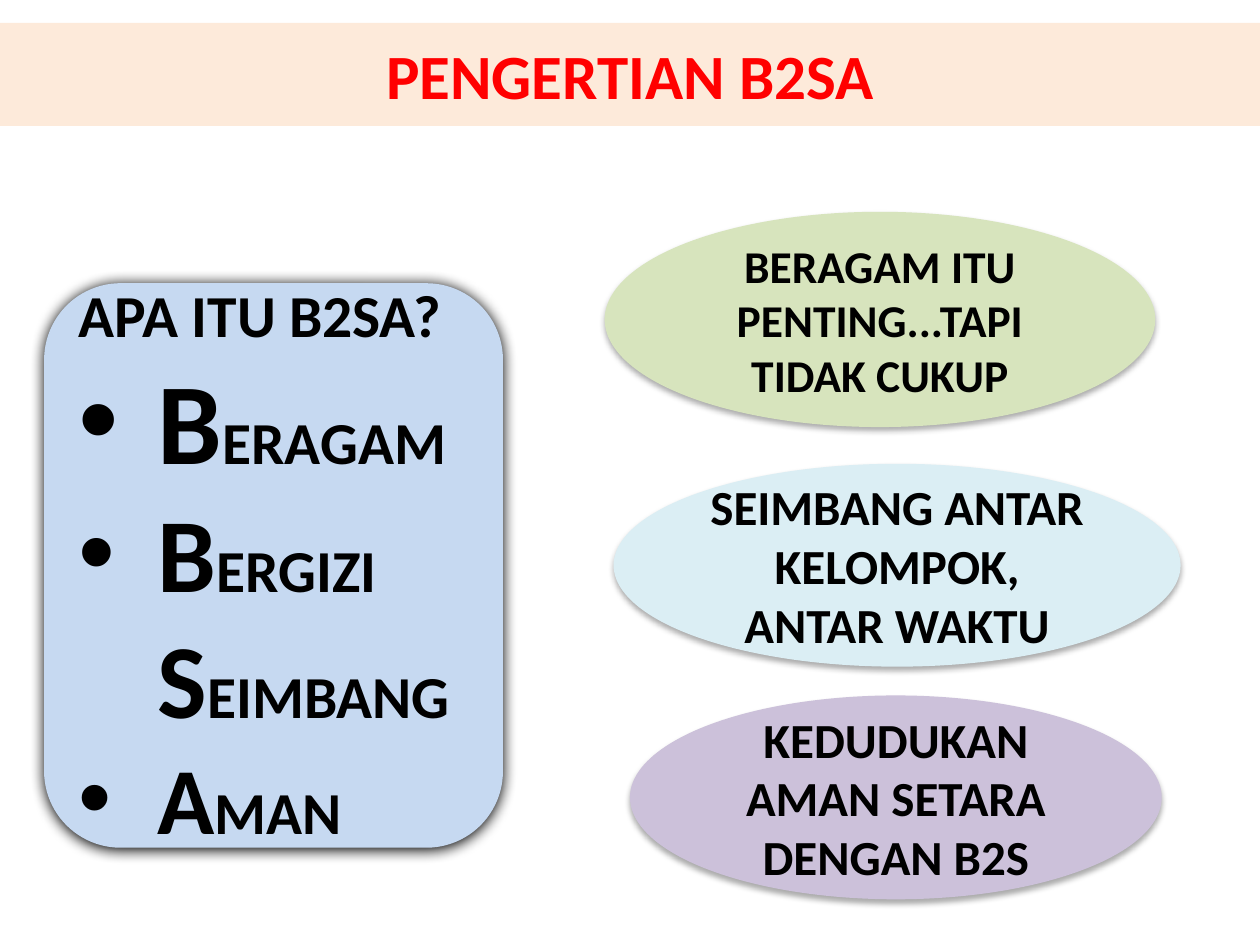
import pptx
import pptx.util
import pptx.dml.color
import pptx.enum.shapes
import pptx.enum.text
import pptx.oxml
import pptx.oxml.ns
import lxml.etree

Cm = pptx.util.Cm
Pt = pptx.util.Pt
RGBColor = pptx.dml.color.RGBColor
SHAPES = pptx.enum.shapes.MSO_SHAPE
ALIGN = pptx.enum.text.PP_ALIGN
qn = pptx.oxml.ns.qn

BLACK = RGBColor(0x00, 0x00, 0x00)
RED = RGBColor(0xFF, 0x00, 0x00)
PEACH = RGBColor(0xFD, 0xEA, 0xDA)
BLUE = RGBColor(0xC6, 0xD9, 0xF1)
GREEN = RGBColor(0xD7, 0xE4, 0xBD)
AQUA = RGBColor(0xDB, 0xEE, 0xF4)
PURPLE = RGBColor(0xCC, 0xC1, 0xDA)

PANEL_SHADOW = {"blur": 8.5, "distance": 1, "opacity": 100}
OVAL_SHADOW = {"blur": 3.5, "distance": 2.2, "opacity": 32}

SMALL_SIZE = 34
# Each paragraph: whether it has a bullet, then its (text, size) runs.
PANEL_PARAGRAPHS = [
    (False, [("APA ITU B2SA?", SMALL_SIZE)]),
    (True, [("B", 66), ("ERAGAM", SMALL_SIZE)]),
    (True, [("B", 60), ("ERGIZI ", SMALL_SIZE), ("S", 60), ("EIMBANG", SMALL_SIZE)]),
    (True, [("A", 54), ("MAN", SMALL_SIZE)]),
]

# Box (left, top, width, height in cm), fill, text, size.
OVALS = [
    ((12.19, 4.27, 11.1, 4.34), GREEN, "BERAGAM ITU PENTING...TAPI TIDAK CUKUP", 26),
    ((12.37, 9.35, 11.43, 4.09), AQUA, "SEIMBANG ANTAR KELOMPOK, ANTAR WAKTU", 28),
    ((12.7, 14.02, 10.72, 4.11), PURPLE, "KEDUDUKAN AMAN SETARA DENGAN B2S", 28),
]


def add_shadow(shape, blur, distance, opacity):
    """Cast a black shadow straight down; lengths in points, opacity in percent."""
    effects = shape._element.spPr.find(qn("a:effectLst"))
    shadow = lxml.etree.SubElement(effects, qn("a:outerShdw"), {
        "blurRad": str(int(Pt(blur))), "dist": str(int(Pt(distance))),
        "dir": "5400000", "rotWithShape": "0"})
    color = lxml.etree.SubElement(shadow, qn("a:srgbClr"), val="000000")
    lxml.etree.SubElement(color, qn("a:alpha"), val=str(opacity * 1000))


def add_bullet(paragraph, indent):
    properties = paragraph._p.get_or_add_pPr()
    properties.set("marL", str(int(indent)))
    properties.set("indent", str(-int(indent)))
    lxml.etree.SubElement(properties, qn("a:buFont"), typeface="Arial")
    lxml.etree.SubElement(properties, qn("a:buChar"), char="•")


def add_filled_shape(slide, kind, box, fill, shadow=None):
    shape = slide.shapes.add_shape(kind, *(Cm(length) for length in box))
    shape.fill.solid()
    shape.fill.fore_color.rgb = fill
    shape.line.fill.background()
    shape.shadow.inherit = False
    if shadow:
        add_shadow(shape, **shadow)
    shape.text_frame.word_wrap = True
    shape.text_frame.vertical_anchor = pptx.enum.text.MSO_ANCHOR.MIDDLE
    return shape


def add_run(paragraph, text, size, color=BLACK):
    run = paragraph.add_run()
    run.text = text
    for name, value in {"name": "Calibri", "size": Pt(size), "bold": True}.items():
        setattr(run.font, name, value)
    run.font.color.rgb = color


def add_label(slide, kind, box, fill, text, size, color=BLACK, shadow=None):
    """Add a filled shape with one centred paragraph."""
    shape = add_filled_shape(slide, kind, box, fill, shadow)
    paragraph = shape.text_frame.paragraphs[0]
    paragraph.alignment = ALIGN.CENTER
    add_run(paragraph, text, size, color)


def add_definition_panel(slide, box):
    shape = add_filled_shape(slide, SHAPES.ROUNDED_RECTANGLE, box, BLUE, PANEL_SHADOW)
    frame = shape.text_frame
    for index, (bulleted, runs) in enumerate(PANEL_PARAGRAPHS):
        paragraph = frame.add_paragraph() if index else frame.paragraphs[0]
        paragraph.alignment = ALIGN.LEFT
        if bulleted:
            add_bullet(paragraph, Cm(1.59))
        for text, size in runs:
            add_run(paragraph, text, size)


def main():
    presentation = pptx.Presentation()
    presentation.slide_width = Cm(25.4)
    presentation.slide_height = Cm(19.05)
    slide = presentation.slides.add_slide(presentation.slide_layouts[6])
    add_label(slide, SHAPES.RECTANGLE, (0, 0.46, 25.4, 2.08), PEACH,
              "PENGERTIAN B2SA", 36, RED)
    add_definition_panel(slide, (0.89, 5.71, 9.25, 11.38))
    for box, fill, text, size in OVALS:
        add_label(slide, SHAPES.OVAL, box, fill, text, size, shadow=OVAL_SHADOW)
    presentation.save("out.pptx")


if __name__ == "__main__":
    main()
